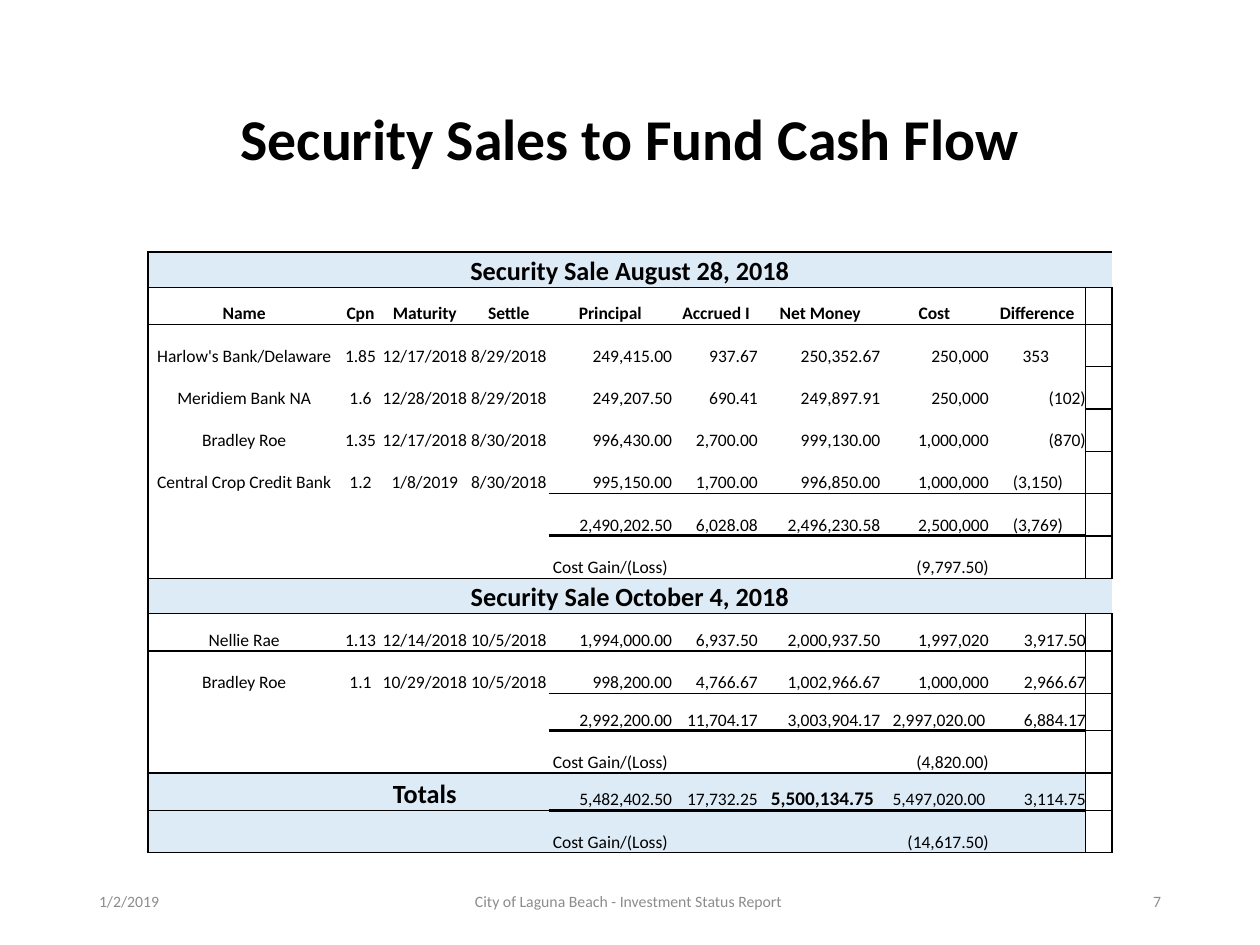
from lxml import etree
from pptx import Presentation
from pptx.dml.color import RGBColor
from pptx.enum import text
from pptx.oxml import ns
from pptx.util import Pt

THEME = {
    "font": "Calibri", "ink": "000000", "muted": "8C8C8C", "band": "DDEBF7",
    "title": 33, "section": 15, "grand": 11, "body": 10, "footer": 9,
    "thin": 0.5, "line": 1, "thick": 2,
}
ALIGN = {"left": text.PP_ALIGN.LEFT, "center": text.PP_ALIGN.CENTER,
         "right": text.PP_ALIGN.RIGHT}

TITLE = "Security Sales to Fund Cash Flow"
FOOTERS = [  # left, width, alignment, text
    (49.5, 162, "left", "1/2/2019"),
    (238.5, 243, "center", "City of Laguna Beach - Investment Status Report "),
    (508.5, 162, "right", "7"),
]
COLUMN_WIDTHS = [110, 23, 50.5, 45.5, 70.5, 50.5, 68.5, 62, 55.5, 15]
GAIN = "Cost Gain/(Loss)"
ROWS = [  # height, kind, cell texts
    (20.2, "section", ["Security Sale August 28, 2018"]),
    (21.2, "header", ["Name", "Cpn", "Maturity", "Settle", "Principal",
                      "Accrued I", "Net Money", "Cost", "Difference"]),
    (24.2, "data", ["Harlow's Bank/Delaware", "1.85", "12/17/2018", "8/29/2018",
                    "249,415.00", "937.67", "250,352.67", "250,000", "353"]),
    (24.2, "data", ["Meridiem Bank NA", "1.6", "12/28/2018", "8/29/2018",
                    "249,207.50", "690.41", "249,897.91", "250,000", "(102)"]),
    (24.2, "data", ["Bradley Roe", "1.35", "12/17/2018", "8/30/2018",
                    "996,430.00", "2,700.00", "999,130.00", "1,000,000", "(870)"]),
    (24.2, "last", ["Central Crop Credit Bank", "1.2", "1/8/2019", "8/30/2018",
                    "995,150.00", "1,700.00", "996,850.00", "1,000,000", "(3,150)"]),
    (24.2, "sum", ["", "", "", "", "2,490,202.50", "6,028.08",
                   "2,496,230.58", "2,500,000", "(3,769)"]),
    (24.2, "gain", ["", "", "", "", GAIN, "", "", "(9,797.50)"]),
    (20.2, "section", ["Security Sale October 4, 2018"]),
    (21.4, "data", ["Nellie Rae", "1.13", "12/14/2018", "10/5/2018",
                    "1,994,000.00", "6,937.50", "2,000,937.50", "1,997,020",
                    "3,917.50"]),
    (24.2, "last", ["Bradley Roe", "1.1", "10/29/2018", "10/5/2018",
                    "998,200.00", "4,766.67", "1,002,966.67", "1,000,000",
                    "2,966.67"]),
    (21.4, "sum", ["", "", "", "", "2,992,200.00", "11,704.17",
                   "3,003,904.17", "2,997,020.00", "6,884.17"]),
    (24.2, "gain", ["", "", "", "", GAIN, "", "", "(4,820.00)"]),
    (21.4, "total", ["", "", "Totals", "", "5,482,402.50", "17,732.25",
                     "5,500,134.75", "5,497,020.00", "3,114.75"]),
    (24.2, "total gain", ["", "", "", "", GAIN, "", "", "(14,617.50)"]),
]
EMPHASIS = {"Totals": THEME["section"], "5,500,134.75": THEME["grand"]}
RIGHT_INSET = {"353": 21, "(3,150)": 13, "(3,769)": 13, "5,500,134.75": 3.5,
               "2,997,020.00": 2, "5,497,020.00": 2}
FIGURES = range(4, 9)
ACCRUED = 5
LAST = len(COLUMN_WIDTHS) - 1
FIGURE_RULES = {"last": THEME["thin"], "sum": THEME["thick"], "total": THEME["thick"]}


def set_all(target, values):
    for name, value in values.items():
        setattr(target, name, value)


def write(frame, content, align, size, color=THEME["ink"], bold=False):
    paragraph = frame.paragraphs[0]
    paragraph.alignment = ALIGN[align]
    run = paragraph.add_run()
    run.text = content
    set_all(run.font, {"name": THEME["font"], "size": Pt(size), "bold": bold})
    run.font.color.rgb = RGBColor.from_string(color)
    return paragraph


def add_text(slide, box, *args, **kwargs):
    frame = slide.shapes.add_textbox(*map(Pt, box)).text_frame
    set_all(frame, {"word_wrap": True, "vertical_anchor": text.MSO_ANCHOR.MIDDLE})
    return write(frame, *args, **kwargs)


def rule_below(row, column):
    """Width of the line under a cell; row -1 is the top edge of the table."""
    if row < 0 or column == LAST:
        return THEME["line"]
    kind = ROWS[row][1]
    following = ROWS[row + 1][1] if row + 1 < len(ROWS) else "section"
    if kind == "section" or following in ("section", "total"):
        return THEME["line"]
    return FIGURE_RULES.get(kind, 0) if column in FIGURES else 0


def draw_borders(cell, row, column):
    divided = ROWS[row][1] != "section"
    widths = {
        "L": THEME["line"] if column == 0 or (column == LAST and divided) else 0,
        "R": THEME["line"] if column == LAST or (column == LAST - 1 and divided) else 0,
        "T": rule_below(row - 1, column),
        "B": rule_below(row, column),
    }
    properties = cell._tc.get_or_add_tcPr()
    for side, width in widths.items():
        if width:
            line = etree.SubElement(properties, ns.qn(f"a:ln{side}"), w=str(Pt(width)))
            fill = etree.SubElement(line, ns.qn("a:solidFill"))
            etree.SubElement(fill, ns.qn("a:srgbClr"), val=THEME["ink"])


def fill_cell(cell, row, column):
    _, kind, texts = ROWS[row]
    content = texts[column] if column < len(texts) else ""
    numeric = column in FIGURES and kind != "header" and content != GAIN
    inset = RIGHT_INSET.get(content, 1.5 if column == ACCRUED else 0) if numeric else 0
    set_all(cell, {"margin_left": 0, "margin_right": Pt(inset), "margin_top": 0,
                   "margin_bottom": 0, "vertical_anchor": text.MSO_ANCHOR.BOTTOM})
    draw_borders(cell, row, column)
    if kind == "section" or (kind.startswith("total") and column != LAST):
        cell.fill.solid()
        cell.fill.fore_color.rgb = RGBColor.from_string(THEME["band"])
    else:
        cell.fill.background()
    if content:
        size = THEME["section"] if kind == "section" else EMPHASIS.get(content, THEME["body"])
        bold = kind in ("section", "header") or content in EMPHASIS
        write(cell.text_frame, content, "right" if numeric else "center", size, bold=bold)
    else:  # keeps an empty cell from stretching its row
        end = etree.SubElement(cell.text_frame.paragraphs[0]._p, ns.qn("a:endParaRPr"))
        end.set("sz", str(THEME["body"] * 100))


def add_sales_table(slide):
    heights = [row[0] for row in ROWS]
    frame = slide.shapes.add_table(len(ROWS), len(COLUMN_WIDTHS), Pt(84.5), Pt(144),
                                   Pt(sum(COLUMN_WIDTHS)), Pt(sum(heights)))
    table = frame.table
    set_all(table, {"first_row": False, "horz_banding": False})
    style = table._tbl.tblPr.find(ns.qn("a:tableStyleId"))
    style.text = "{2D5ABB26-0587-4C30-8999-92F81FD0307C}"  # no style, no grid
    for column, width in zip(table.columns, COLUMN_WIDTHS):
        column.width = Pt(width)
    for row, (height, kind, _) in enumerate(ROWS):
        table.rows[row].height = Pt(height)
        for column in range(LAST + 1):
            fill_cell(table.cell(row, column), row, column)
        if kind == "section":
            table.cell(row, 0).merge(table.cell(row, LAST))


def main():
    presentation = Presentation()
    set_all(presentation, {"slide_width": Pt(720), "slide_height": Pt(540)})
    slide = presentation.slides.add_slide(presentation.slide_layouts[6])
    title = add_text(slide, (49.5, 28.75, 621, 104.5), TITLE, "center",
                     THEME["title"], bold=True)
    title.line_spacing = 0.9
    add_sales_table(slide)
    for left, width, align, content in FOOTERS:
        add_text(slide, (left, 500.5, width, 28.75), content, align,
                 THEME["footer"], THEME["muted"])
    presentation.save("out.pptx")


if __name__ == "__main__":
    main()
